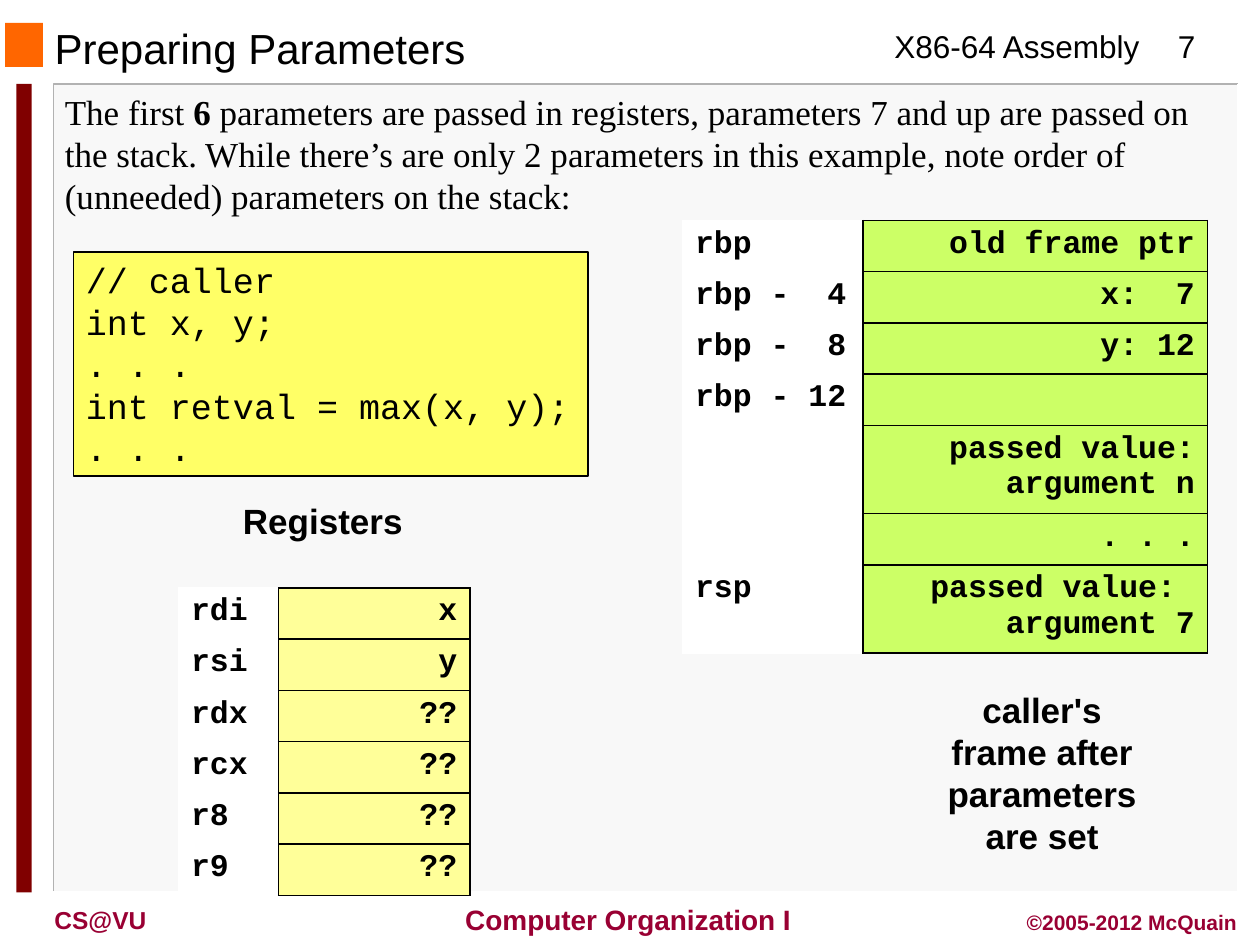
"""Build the slide on preparing parameters for an x86-64 call."""
from lxml.etree import SubElement
from pptx import Presentation
from pptx.dml.color import RGBColor
from pptx.enum.shapes import MSO_SHAPE
from pptx.enum.text import MSO_ANCHOR, PP_ALIGN
from pptx.oxml.ns import qn
from pptx.util import Pt

COLORS = {
    "black": "000000", "white": "FFFFFF", "panel": "F8F8F8", "edge": "B2B2B2",
    "orange": "FF6600", "maroon": "800000", "footer": "990033",
    "code": "FFFF66", "register": "FFFF99", "stack": "CCFF66",
}
SANS, SERIF, MONO = "Arial", "Times New Roman", "Courier New"
ROW_HEIGHT, TALL_ROW_HEIGHT = 29.3, 50.4

STACK_ROWS = [
    ("rbp", "old frame ptr"),
    ("rbp -  4", "x:  7"),
    ("rbp -  8", "y: 12"),
    ("rbp - 12", ""),
    ("", "passed value: argument n"),
    ("", ". . ."),
    ("rsp", "passed value:  argument 7"),
]
REGISTER_ROWS = [("rdi", "x"), ("rsi", "y")] + [
    (name, "??") for name in ("rdx", "rcx", "r8", "r9")]
CODE_LINES = ["// caller", "int x, y;", ". . .", "int retval = max(x, y);", ". . ."]


def color(name):
    """Return the named colour."""
    return RGBColor.from_string(COLORS[name])


def points(box):
    """Turn a box of numbers into lengths in points."""
    return [Pt(value) for value in box]


def add_run(paragraph, text, font, size, bold=False, ink="black"):
    """Append one formatted run to a paragraph."""
    run = paragraph.add_run()
    run.text = text
    run.font.name, run.font.size, run.font.bold = font, Pt(size), bold
    run.font.color.rgb = color(ink)


def add_label(slide, box, text, size, align=PP_ALIGN.LEFT, bold=True,
              ink="black", wrap=True):
    """Place a one-run sans-serif text box."""
    frame = slide.shapes.add_textbox(*points(box)).text_frame
    frame.word_wrap = wrap
    paragraph = frame.paragraphs[0]
    paragraph.alignment = align
    add_run(paragraph, text, SANS, size, bold, ink)


def add_block(slide, box, fill, line=None):
    """Place a filled rectangle, outlined when a line colour is given."""
    shape = slide.shapes.add_shape(MSO_SHAPE.RECTANGLE, *points(box))
    shape.shadow.inherit = False
    shape.fill.solid()
    shape.fill.fore_color.rgb = color(fill)
    if line:
        shape.line.color.rgb = color(line)
        shape.line.width = Pt(0.75)
    else:
        shape.line.fill.background()
    return shape


def add_panel(slide, box):
    """Place the content panel with its grey and white bevel edges."""
    left, top, width, height = box
    right, bottom = left + width, top + height
    add_block(slide, box, "panel")
    for corner, name in (((left, top), "edge"), ((right, bottom), "white")):
        builder = slide.shapes.build_freeform(Pt(right), Pt(top))
        builder.add_line_segments(
            [points(corner), points((left, bottom))], close=False)
        edge = builder.convert_to_shape()
        edge.shadow.inherit = False
        edge.fill.background()
        edge.line.color.rgb = color(name)
        edge.line.width = Pt(1)


def add_header(slide, box):
    """Place the title, course topic and slide number."""
    left, top, width, height = box
    add_block(slide, (3, 13, 21.6, 25.2), "orange")
    title = slide.shapes.title
    title.left, title.top, title.width, title.height = points(
        (left, top + 1.5, 456, 27))
    frame = title.text_frame
    frame.vertical_anchor = MSO_ANCHOR.MIDDLE
    frame.paragraphs[0].alignment = PP_ALIGN.LEFT
    add_run(frame.paragraphs[0], "Preparing Parameters", SANS, 24)
    add_label(slide, (504, top, 156, height), "X86-64 Assembly", 18,
              bold=False, wrap=False)
    add_label(slide, (left + width - 48, top, 48, height), "7", 18,
              PP_ALIGN.CENTER, bold=False)


def add_footer(slide, box):
    """Place the department, course name and copyright line."""
    left, top, width, height = box
    add_label(slide, (left, top + 1.5, 108, 24), "CS@VU", 14, ink="footer")
    add_label(slide, (252, top, 209.5, height), " Computer Organization I", 16,
              PP_ALIGN.CENTER, ink="footer", wrap=False)
    add_label(slide, (left + width - 150, top + 4, 150, 22),
              "©2005-2012 McQuain", 12, PP_ALIGN.RIGHT, ink="footer")


def add_introduction(slide, box):
    """Place the explanatory paragraph."""
    frame = slide.shapes.add_textbox(*points(box)).text_frame
    frame.word_wrap = True
    paragraph = frame.paragraphs[0]
    add_run(paragraph, "The first ", SERIF, 20)
    add_run(paragraph, "6 ", SERIF, 20, bold=True)
    add_run(paragraph, "parameters are passed in registers, parameters 7 and up "
            "are passed on the stack. While there’s are only 2 parameters in this "
            "example, note order of (unneeded) parameters on the stack:", SERIF, 20)


def add_code(slide, box):
    """Place the boxed caller code."""
    frame = add_block(slide, box, "code", "black").text_frame
    frame.word_wrap = True
    frame.vertical_anchor = MSO_ANCHOR.TOP
    for index, line in enumerate(CODE_LINES):
        paragraph = frame.add_paragraph() if index else frame.paragraphs[0]
        paragraph.alignment = PP_ALIGN.LEFT
        add_run(paragraph, line, MONO, 20)


def set_borders(cell, sides):
    """Draw black one-point borders on the given sides of a cell."""
    properties = cell._tc.get_or_add_tcPr()
    for index, side in enumerate(sides):
        line = SubElement(properties, qn(f"a:ln{side}"), w=str(Pt(1)))
        properties.remove(line)
        properties.insert(index, line)
        fill = SubElement(line, qn("a:solidFill"))
        SubElement(fill, qn("a:srgbClr"), val=COLORS["black"])


def add_memory_table(slide, box, rows, name_width, fill):
    """Place a table of names beside their bordered values."""
    left, top, width, height = box
    table = slide.shapes.add_table(len(rows), 2, *points(box)).table
    table.first_row = table.horz_banding = False
    table.columns[0].width = Pt(name_width)
    table.columns[1].width = Pt(width - name_width)
    styles = ((PP_ALIGN.LEFT, "white", "R"), (PP_ALIGN.RIGHT, fill, "LRTB"))
    for row, texts in zip(table.rows, rows):
        tall = texts[1].startswith("passed")
        row.height = Pt(TALL_ROW_HEIGHT if tall else ROW_HEIGHT)
        for cell, text, (align, background, sides) in zip(row.cells, texts, styles):
            cell.fill.solid()
            cell.fill.fore_color.rgb = color(background)
            set_borders(cell, sides)
            paragraph = cell.text_frame.paragraphs[0]
            paragraph.alignment = align
            paragraph.font.size = Pt(18)
            if text:
                add_run(paragraph, text, MONO, 18, bold=True)


def main():
    """Assemble and save the slide."""
    presentation = Presentation()
    presentation.slide_width, presentation.slide_height = Pt(720), Pt(540)
    slide = presentation.slides.add_slide(presentation.slide_layouts[5])
    add_panel(slide, (30.5, 48.2, 677, 461.5))
    add_block(slide, (9.4, 48, 8.8, 462), "maroon")
    add_header(slide, (24, 12, 678, 29))
    add_footer(slide, (24, 512, 690, 26.5))
    add_introduction(slide, (30, 48, 678, 80))
    add_code(slide, (42, 144, 294, 128))
    add_memory_table(slide, (390, 126, 300, 247), STACK_ROWS, 103.2, "stack")
    add_label(slide, (525, 390, 141, 104.5),
              "caller's frame after parameters are set", 20, PP_ALIGN.CENTER)
    add_memory_table(slide, (102, 336, 166.5, 176), REGISTER_ROWS, 57.3, "register")
    add_label(slide, (114, 282, 141, 31.5), "Registers", 20, PP_ALIGN.CENTER)
    presentation.save("out.pptx")


if __name__ == "__main__":
    main()
